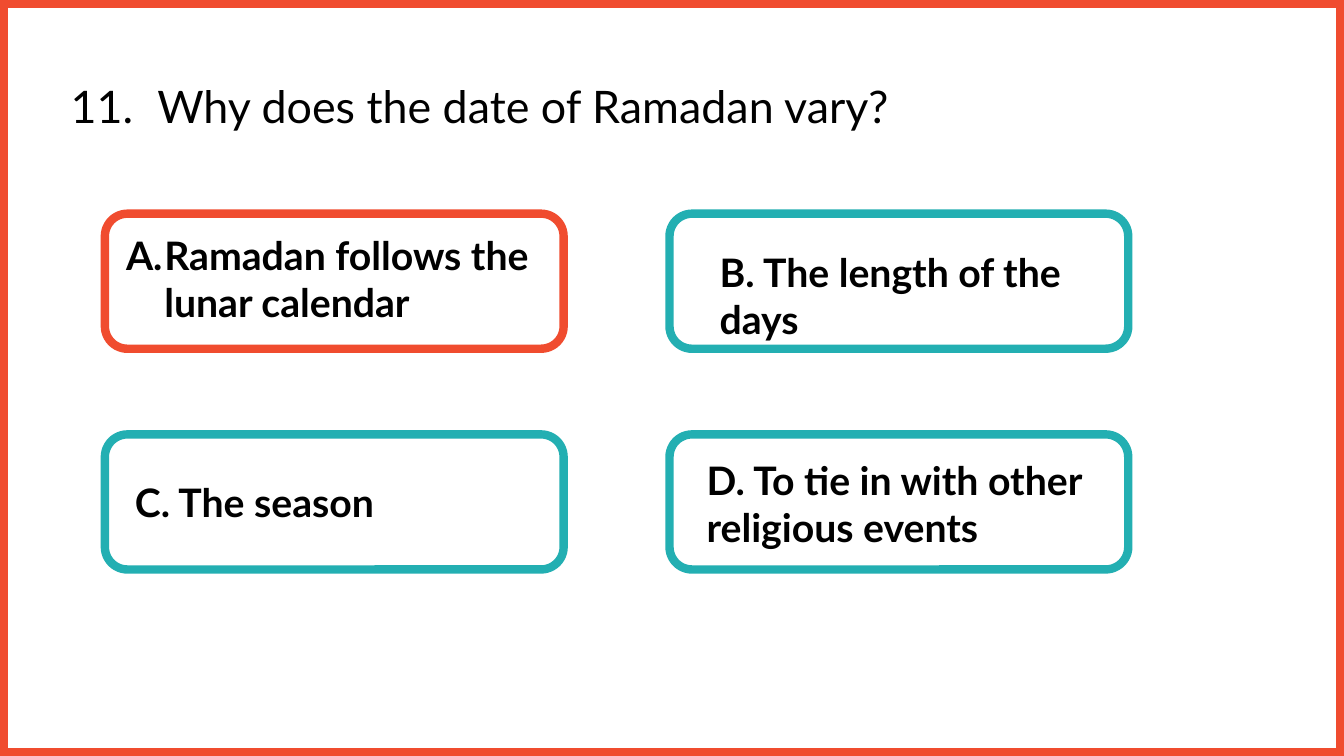
from lxml.etree import SubElement
from pptx import Presentation
from pptx.dml.color import RGBColor
from pptx.enum.shapes import MSO_SHAPE
from pptx.enum.text import MSO_ANCHOR, MSO_AUTO_SIZE, PP_ALIGN
from pptx.oxml.ns import qn
from pptx.util import Inches, Pt

RED = RGBColor(0xF0, 0x4C, 0x2F)
TEAL = RGBColor(0x23, 0xAF, 0xB2)
BLACK = RGBColor(0, 0, 0)
WHITE = RGBColor(0xFF, 0xFF, 0xFF)

QUESTION = "11.\tWhy does the date of Ramadan vary?"
CORRECT_ANSWER = ("Ramadan follows the lunar calendar", 1.15, 2.24, 4.22)
OTHER_ANSWERS = [
    ("B. The length of the days", 7.04, 2.41, 4.16),
    ("C. The season", 1.24, 4.7, 4.15),
    ("D. To tie in with other religious events", 6.91, 4.48, 4.42),
]
ANSWER_COLORS = [RED, TEAL, TEAL, TEAL]
SLIDE_WIDTH, SLIDE_HEIGHT = 13.33, 7.5
GRID_LEFT, GRID_TOP = 1.04, 2.12
COLUMN_STEP, ROW_STEP = 5.6, 2.19
FRAME_WIDTH, FRAME_HEIGHT = 4.55, 1.34
ANSWER_HEIGHT = 0.95
QUESTION_TAB = 0.86
HANGING_INDENT = 0.38


def place(shape, left, top, width, height):
    """Position a shape, with lengths in inches."""
    shape.left, shape.top = Inches(left), Inches(top)
    shape.width, shape.height = Inches(width), Inches(height)


def add_outline(page, kind, left, top, width, height, color, weight):
    """Draw an unfilled preset shape with a coloured line."""
    outline = page.shapes.add_shape(
        kind, Inches(left), Inches(top), Inches(width), Inches(height))
    outline.shadow.inherit = False
    outline.fill.background()
    outline.line.color.rgb = color
    outline.line.width = Pt(weight)
    return outline


def write(shape, text, size, bold, anchor):
    """Put one left-aligned paragraph of text into a shape."""
    frame = shape.text_frame
    frame.word_wrap = True
    frame.auto_size = MSO_AUTO_SIZE.NONE
    frame.vertical_anchor = anchor
    para = frame.paragraphs[0]
    para.text = text
    para.alignment = PP_ALIGN.LEFT
    para.space_before, para.space_after = Pt(0), Pt(6)
    para.font.name = "Lato"
    para.font.size = Pt(size)
    para.font.bold = bold
    para.font.color.rgb = BLACK
    return para


def add_question(page):
    """Fill the title with the numbered question."""
    title = page.shapes.title
    place(title, 0.6, 0.6, 11.33, 0.76)
    properties = title.text_frame.paragraphs[0]._p.get_or_add_pPr()
    tabs = SubElement(properties, qn("a:tabLst"))
    SubElement(tabs, qn("a:tab"), pos=str(Inches(QUESTION_TAB)), algn="l")
    para = write(title, QUESTION, 32, False, MSO_ANCHOR.MIDDLE)
    para.line_spacing = 1.25


def add_answers(page):
    """Write the lettered answers and frame them in a two-by-two grid."""
    text, left, top, width = CORRECT_ANSWER
    body = page.placeholders[1]
    place(body, left, top, width, ANSWER_HEIGHT)
    properties = body.text_frame.paragraphs[0]._p.get_or_add_pPr()
    properties.set("marL", str(Inches(HANGING_INDENT)))
    properties.set("indent", str(-Inches(HANGING_INDENT)))
    SubElement(properties, qn("a:buFont"), typeface="+mj-lt")
    SubElement(properties, qn("a:buAutoNum"), type="alphaUcPeriod")
    write(body, text, 28, True, MSO_ANCHOR.TOP)

    for index, color in enumerate(ANSWER_COLORS):
        row, column = divmod(index, 2)
        add_outline(page, MSO_SHAPE.FLOWCHART_ALTERNATE_PROCESS,
                    GRID_LEFT + column * COLUMN_STEP, GRID_TOP + row * ROW_STEP,
                    FRAME_WIDTH, FRAME_HEIGHT, color, 6)

    for text, left, top, width in OTHER_ANSWERS:
        box = page.shapes.add_textbox(
            Inches(left), Inches(top), Inches(width), Inches(ANSWER_HEIGHT))
        write(box, text, 28, True, MSO_ANCHOR.TOP)


def main():
    """Build and save the quiz slide."""
    deck = Presentation()
    deck.slide_width, deck.slide_height = Inches(SLIDE_WIDTH), Inches(SLIDE_HEIGHT)
    page = deck.slides.add_slide(deck.slide_layouts[1])
    page.background.fill.solid()
    page.background.fill.fore_color.rgb = WHITE
    add_outline(page, MSO_SHAPE.RECTANGLE, 0, 0, SLIDE_WIDTH, SLIDE_HEIGHT, RED, 12)
    add_question(page)
    add_answers(page)
    deck.save("out.pptx")


if __name__ == "__main__":
    main()
